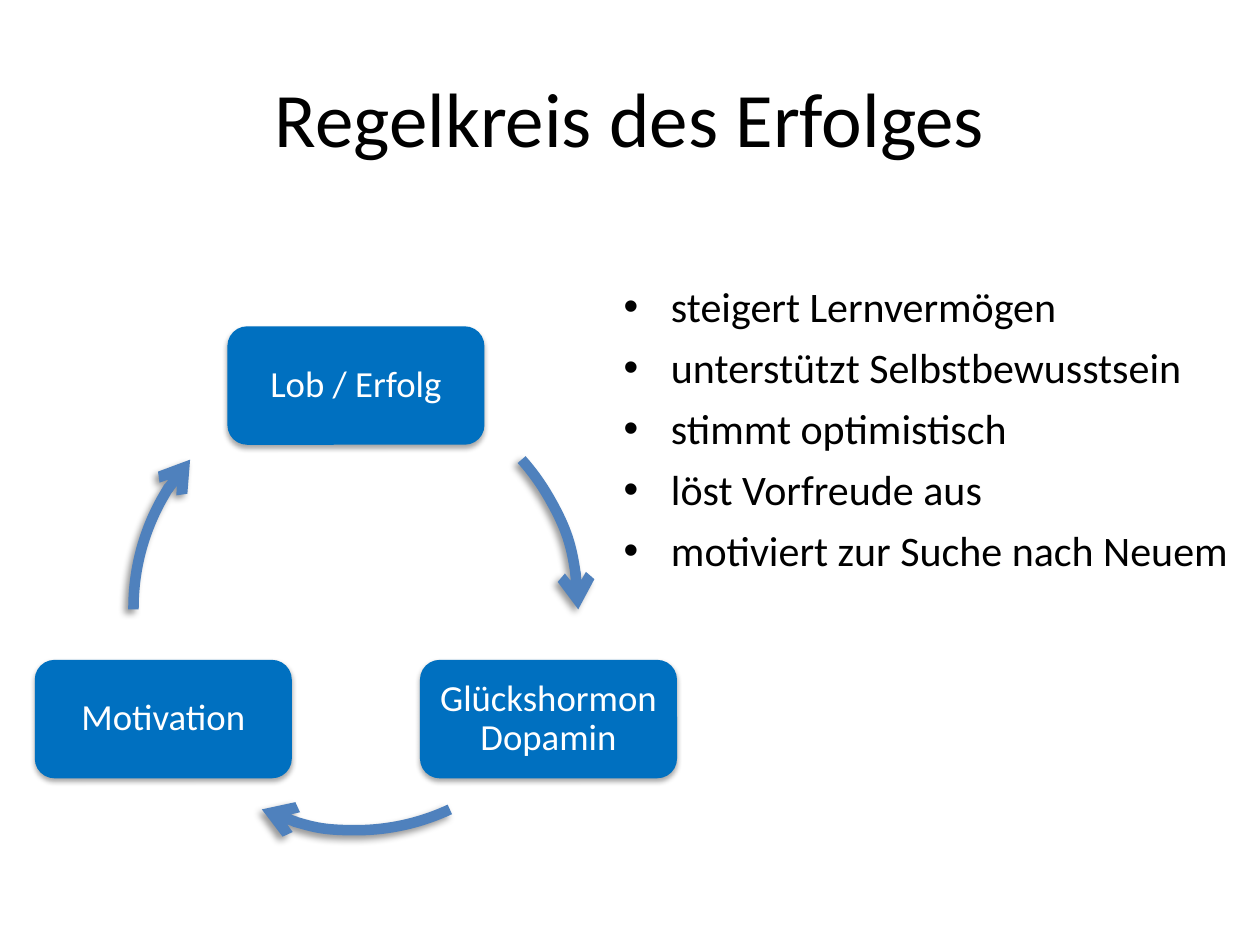
from math import cos, radians, sin

from lxml import etree
from pptx import Presentation
from pptx.dml.color import RGBColor
from pptx.enum.shapes import MSO_SHAPE
from pptx.enum.text import MSO_ANCHOR, MSO_AUTO_SIZE, PP_ALIGN
from pptx.oxml.ns import qn
from pptx.util import Inches, Pt

ARC, BOX = MSO_SHAPE.ARC, MSO_SHAPE.ROUNDED_RECTANGLE
CENTER, LEFT = PP_ALIGN.CENTER, PP_ALIGN.LEFT
MIDDLE, TOP = MSO_ANCHOR.MIDDLE, MSO_ANCHOR.TOP
NO_RESIZE = MSO_AUTO_SIZE.NONE

THEME = {
    "font": "Calibri",
    "text": RGBColor(0x00, 0x00, 0x00),
    "box": RGBColor(0x00, 0x70, 0xC0),
    "box text": RGBColor(0xFF, 0xFF, 0xFF),
    "arrow": RGBColor(0x4F, 0x81, 0xBD),
    "title size": Pt(44),
    "list size": Pt(24),
    "box size": Pt(21),
    "arrow width": Pt(6),
}


def write_text(shape, lines, size, color, align=LEFT, anchor=TOP,
               line_spacing=None, space_before=None):
    frame = shape.text_frame
    frame.text = "\n".join(lines)
    frame.word_wrap = True
    frame.auto_size = NO_RESIZE
    frame.vertical_anchor = anchor
    for paragraph in frame.paragraphs:
        paragraph.alignment = align
        paragraph.line_spacing = line_spacing
        paragraph.space_before = space_before
        font = paragraph.runs[0].font
        font.name, font.size, font.color.rgb = THEME["font"], size, color


def add_shadow(shape, opacity, blur, distance, angle):
    shape.shadow.inherit = False
    effects = shape._element.spPr.find(qn("a:effectLst"))
    shadow = etree.SubElement(
        effects, qn("a:outerShdw"), blurRad=str(Pt(blur)), dist=str(Pt(distance)),
        dir=str(angle * 60000), rotWithShape="0")
    black = etree.SubElement(shadow, qn("a:srgbClr"), val="000000")
    etree.SubElement(black, qn("a:alpha"), val=str(opacity * 1000))


presentation = Presentation()
presentation.slide_width, presentation.slide_height = Inches(10), Inches(7.5)
slide = presentation.slides.add_slide(presentation.slide_layouts[1])
title, body = slide.placeholders

# All lengths are counted in hundredths of the slide width
unit = presentation.slide_width // 100

# Title
title.left, title.top, title.width, title.height = (
    int(unit * length) for length in (5, 3, 90, 12.5))
write_text(title, ["Regelkreis des Erfolges"], THEME["title size"], THEME["text"],
           align=CENTER, anchor=MIDDLE)

# Cycle: boxes a third of a turn apart, an arrow after each one
center_x, center_y, radius = 28.25 * unit, 48.25 * unit, 17.65 * unit
box_width, box_height = int(20.4 * unit), int(9.4 * unit)
cycle = slide.shapes.add_group_shape()
stations = [
    ("Lob / Erfolg", 318.2, 0.4),
    ("Glückshormon Dopamin", 65, 115),
    ("Motivation", 179.6, 221.8),
]
for index, (label, arc_start, arc_end) in enumerate(stations):
    angle = radians(120 * index - 90)
    box = cycle.shapes.add_shape(
        BOX, int(center_x + radius * cos(angle) - box_width / 2),
        int(center_y + radius * sin(angle) - box_height / 2), box_width, box_height)
    box.fill.solid()
    box.fill.fore_color.rgb = THEME["box"]
    box.line.fill.background()
    add_shadow(box, opacity=35, blur=3.1, distance=1.8, angle=90)
    write_text(box, [label], THEME["box size"], THEME["box text"],
               align=CENTER, anchor=MIDDLE, line_spacing=0.9)

    arrow = cycle.shapes.add_shape(
        ARC, int(center_x - radius), int(center_y - radius),
        int(2 * radius), int(2 * radius))
    # Arc angles are stored in 60000ths of a degree, adjustments in 100000ths
    arrow.adjustments[0], arrow.adjustments[1] = arc_start * 0.6, arc_end * 0.6
    arrow.fill.background()
    arrow.line.color.rgb = THEME["arrow"]
    arrow.line.width = THEME["arrow width"]
    etree.SubElement(arrow.line._get_or_add_ln(), qn("a:tailEnd"), type="arrow")
    add_shadow(arrow, opacity=40, blur=4, distance=3, angle=135)

# Effects of success
body.left, body.top, body.width, body.height = (
    int(unit * length) for length in (48.5, 21.8, 54.7, 24.6))
effects_of_success = [
    "steigert Lernvermögen",
    "unterstützt Selbstbewusstsein",
    "stimmt optimistisch",
    "löst Vorfreude aus",
    "motiviert zur Suche nach Neuem",
]
write_text(body, effects_of_success, THEME["list size"], THEME["text"],
           space_before=Pt(6))

presentation.save("out.pptx")
